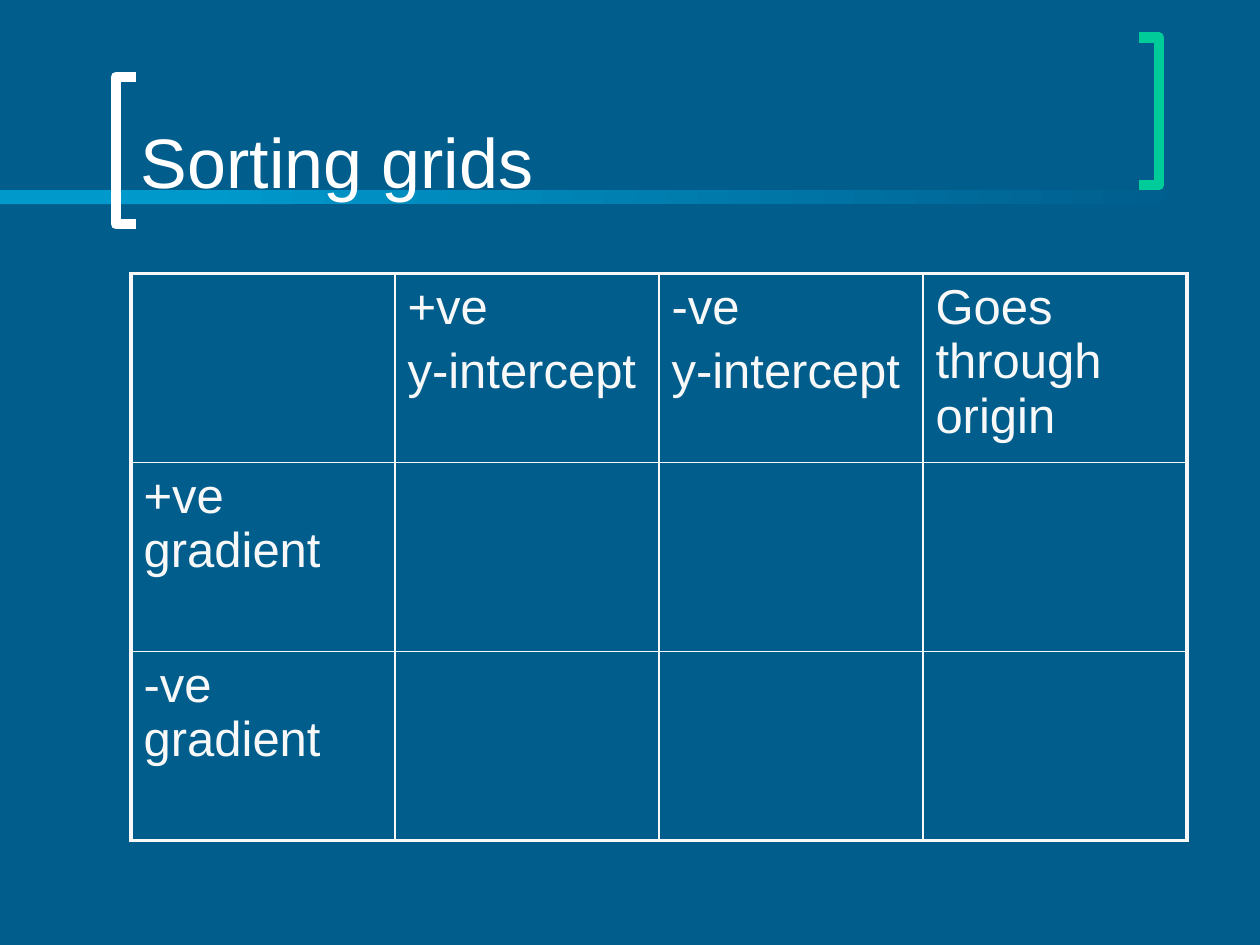
"""Build the "Sorting grids" slide: a bracketed title above a blank sorting table."""
from lxml import etree
from pptx import Presentation
from pptx.dml.color import RGBColor
from pptx.enum.shapes import MSO_SHAPE
from pptx.enum.text import MSO_ANCHOR
from pptx.oxml.ns import qn
from pptx.util import Inches, Pt

RECTANGLE = MSO_SHAPE.RECTANGLE
BOTTOM = MSO_ANCHOR.BOTTOM

FONT = "Arial"
COLORS = {
    "background": "005D8C",
    "band": "0099CC",
    "white": "FFFFFF",
    "green": "00CC99",
    "table": "F8F8F8",
}

TITLE = "Sorting grids"
GRID = [
    [[], ["+ve", "y-intercept"], ["-ve", "y-intercept"], ["Goes through origin"]],
    [["+ve gradient"], [], [], []],
    [["-ve gradient"], [], [], []],
]
BANDS = [(0, 2.33, None), (1.58, 7.92, "background")]
BAND_TOP, BAND_HEIGHT = 1.51, 0.11
BRACKETS = [(1.08, 0.92, 0.61, "white"), (9.04, 9.2, 0.3, "green")]
BRACKET_HEIGHT = 1.17
TITLE_BOX = (1.02, 0.11, 7.83, 1.55)
TABLE_BOX = (1.04, 2.17, 8.38, 4.5)
INNER_BORDER, OUTER_BORDER = 1, 2.25


def color(name):
    return RGBColor.from_string(COLORS[name])


def add_run(paragraph, text, size, color_name):
    run = paragraph.add_run()
    run.text = text
    run.font.name = FONT
    run.font.size = Pt(size)
    run.font.color.rgb = color(color_name)


def add_band(slide, left, width, fade_to):
    band = slide.shapes.add_shape(
        RECTANGLE, Inches(left), Inches(BAND_TOP), Inches(width), Inches(BAND_HEIGHT)
    )
    band.shadow.inherit = False
    band.line.fill.background()
    if fade_to:
        band.fill.gradient()
        band.fill.gradient_angle = 0
        for stop, name in zip(band.fill.gradient_stops, ("band", fade_to)):
            stop.color.rgb = color(name)
    else:
        band.fill.solid()
        band.fill.fore_color.rgb = color("band")


def add_bracket(slide, tip, spine, top, color_name):
    bottom = top + BRACKET_HEIGHT
    corners = [(spine, top), (spine, bottom), (tip, bottom)]
    builder = slide.shapes.build_freeform(Inches(tip), Inches(top))
    builder.add_line_segments([(Inches(x), Inches(y)) for x, y in corners], close=False)
    bracket = builder.convert_to_shape()
    bracket.shadow.inherit = False
    bracket.fill.background()
    bracket.line.color.rgb = color(color_name)
    bracket.line.width = Pt(6)


def add_title(slide):
    frame = slide.shapes.add_textbox(*map(Inches, TITLE_BOX)).text_frame
    frame.word_wrap = True
    frame.vertical_anchor = BOTTOM
    add_run(frame.paragraphs[0], TITLE, 40, "white")


def set_borders(cell, outer_sides):
    properties = cell._tc.get_or_add_tcPr()
    for side, is_outer in outer_sides.items():
        width = Pt(OUTER_BORDER if is_outer else INNER_BORDER)
        line = etree.SubElement(properties, qn(f"a:ln{side}"), w=str(width))
        fill = etree.SubElement(line, qn("a:solidFill"))
        etree.SubElement(fill, qn("a:srgbClr"), val=COLORS["table"])


def add_grid(slide):
    row_count, column_count = len(GRID), len(GRID[0])
    left, top, width, height = map(Inches, TABLE_BOX)
    table = slide.shapes.add_table(
        row_count, column_count, left, top, width, height
    ).table
    table.first_row = table.horz_banding = False
    for row_index, row in enumerate(GRID):
        for column_index, lines in enumerate(row):
            cell = table.cell(row_index, column_index)
            set_borders(cell, {
                "L": column_index == 0,
                "R": column_index == column_count - 1,
                "T": row_index == 0,
                "B": row_index == row_count - 1,
            })
            cell.fill.background()
            frame = cell.text_frame
            for index, text in enumerate(lines):
                paragraph = frame.add_paragraph() if index else frame.paragraphs[0]
                paragraph.space_before = Pt(5.6)
                add_run(paragraph, text, 28, "table")


def main():
    presentation = Presentation()
    presentation.slide_width, presentation.slide_height = Inches(10), Inches(7.5)
    slide = presentation.slides.add_slide(presentation.slide_layouts[6])
    slide.background.fill.solid()
    slide.background.fill.fore_color.rgb = color("background")
    for band in BANDS:
        add_band(slide, *band)
    for bracket in BRACKETS:
        add_bracket(slide, *bracket)
    add_title(slide)
    add_grid(slide)
    presentation.save("out.pptx")


if __name__ == "__main__":
    main()
